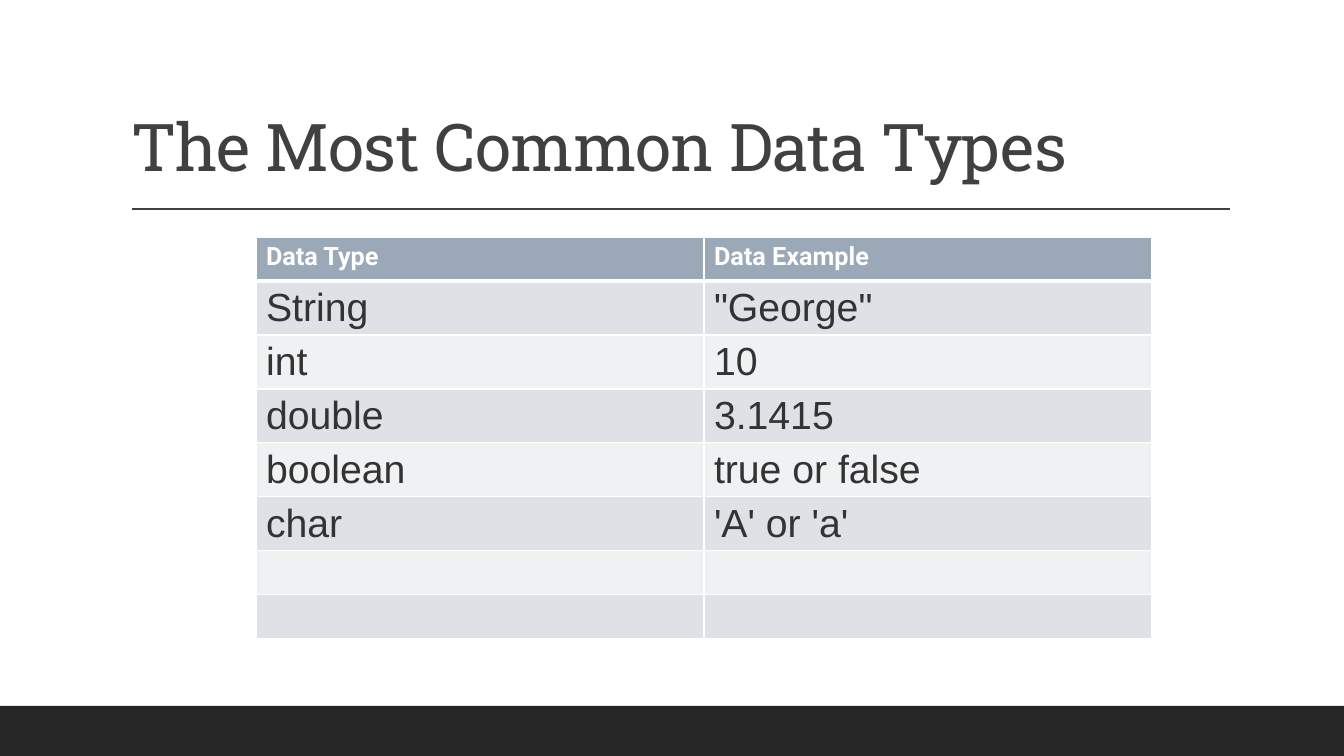
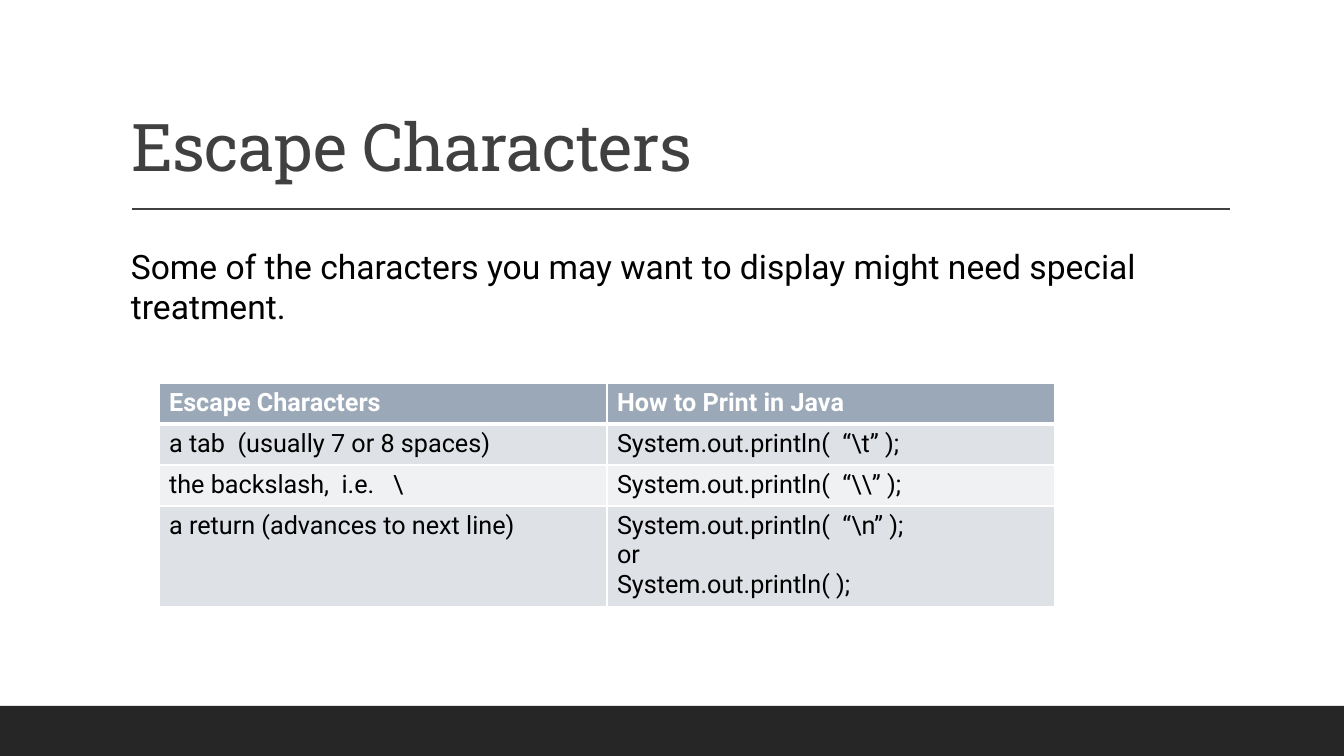
from lxml import etree
from pptx import Presentation, util as u
from pptx.dml.color import RGBColor
from pptx.enum import shapes, text as t
from pptx.oxml import ns

WIDTH, HEIGHT = 1344, 756
EMU_PER_PX = u.Inches(7.5) / HEIGHT

WHITE = RGBColor(0xFF, 0xFF, 0xFF)
BLACK = RGBColor(0x00, 0x00, 0x00)
BAND = RGBColor(0x26, 0x26, 0x26)
TITLE = RGBColor(0x40, 0x40, 0x40)
BODY = RGBColor(0x33, 0x33, 0x33)
HEADER = RGBColor(0x9B, 0xA8, 0xB7)
STRIPES = RGBColor(0xDE, 0xE1, 0xE6), RGBColor(0xEF, 0xF1, 0xF3)

DATA_TYPES = [
    ("Data Type", "Data Example"),
    ("String", '"George"'),
    ("int", "10"),
    ("double", "3.1415"),
    ("boolean", "true or false"),
    ("char", "'A' or 'a'"),
    ("", ""),
    ("", ""),
]
ESCAPES = [
    ("Escape Characters", "How to Print in Java"),
    ("a tab  (usually 7 or 8 spaces)", r"System.out.println(  “\t” );"),
    ("the backslash,  i.e.   \\", r"System.out.println(  “\\” );"),
    ("a return (advances to next line)",
     r"System.out.println(  “\n” );" + "\nor\nSystem.out.println( );"),
]


def px(*lengths):
    return [u.Emu(round(length * EMU_PER_PX)) for length in lengths]


def write(frame, text, *, size=18, font="Roboto", color=BLACK, bold=False,
          line_spacing=1.0, tracking=None):
    """Fill a text frame, one paragraph per line; tracking is in 1/100 pt."""
    for index, line in enumerate(text.split("\n")):
        paragraph = frame.add_paragraph() if index else frame.paragraphs[0]
        paragraph.alignment = t.PP_ALIGN.LEFT
        paragraph.line_spacing = line_spacing
        if not line:
            continue
        run = paragraph.add_run()
        run.text = line
        run.font.size = u.Pt(size)
        run.font.name = font
        run.font.bold = bold
        run.font.color.rgb = color
        if tracking is not None:
            run.font._element.set("spc", str(tracking))


def set_borders(cell, **widths):
    """Draw white borders; must run before the cell gets its fill."""
    properties = cell._tc.get_or_add_tcPr()
    for side in "LRTB":
        width = u.Pt(widths.get(side, 1))
        line = etree.SubElement(properties, ns.qn(f"a:ln{side}"), w=str(width))
        fill = etree.SubElement(line, ns.qn("a:solidFill"))
        etree.SubElement(fill, ns.qn("a:srgbClr"), val=str(WHITE))


class Deck:
    """Holds the shared style and the slide being built."""

    def __init__(self):
        self.presentation = Presentation()
        (self.presentation.slide_width,
         self.presentation.slide_height) = px(WIDTH, HEIGHT)
        self.slide = None

    def add_slide(self, title):
        layout = self.presentation.slide_layouts.get_by_name("Title Only")
        self.slide = self.presentation.slides.add_slide(layout)
        self.add_band()
        self.add_rule()
        self.add_title(title)

    def add_band(self):
        band = self.slide.shapes.add_shape(
            shapes.MSO_SHAPE.RECTANGLE, *px(0, 706, WIDTH, HEIGHT - 706))
        band.shadow.inherit = False
        band.fill.solid()
        band.fill.fore_color.rgb = BAND
        band.line.fill.background()

    def add_rule(self):
        rule = self.slide.shapes.add_connector(
            shapes.MSO_CONNECTOR.STRAIGHT, *px(132, 209, 1230, 209))
        rule.line.color.rgb = TITLE
        rule.line.width = u.Pt(1)
        etree.SubElement(rule._element.spPr, ns.qn("a:effectLst"))

    def add_title(self, title):
        shape = self.slide.shapes.title
        shape.left, shape.top, shape.width, shape.height = px(121, 31, 1109, 160)
        frame = shape.text_frame
        frame.word_wrap = True
        frame.auto_size = t.MSO_AUTO_SIZE.NONE
        frame.vertical_anchor = t.MSO_ANCHOR.BOTTOM
        write(frame, title, size=47, font="Roboto Slab", color=TITLE,
              line_spacing=0.9, tracking=-50)

    def add_text(self, text, left, top, width, height, **style):
        frame = self.slide.shapes.add_textbox(
            *px(left, top, width, height)).text_frame
        frame.word_wrap = False
        frame.auto_size = t.MSO_AUTO_SIZE.SHAPE_TO_FIT_TEXT
        write(frame, text, **style)

    def add_table(self, rows, left, top, heights, column_width=448, **style):
        columns = len(rows[0])
        table = self.slide.shapes.add_table(
            len(rows), columns,
            *px(left, top, columns * column_width, sum(heights))).table
        table.first_row = table.horz_banding = False
        for row, height in zip(table.rows, px(*heights)):
            row.height = height
        for row_index, row in enumerate(rows):
            for column_index, text in enumerate(row):
                cell = table.cell(row_index, column_index)
                set_borders(cell, B=3 if row_index == 0 else 1,
                            T=3 if row_index == 1 else 1)
                cell.fill.solid()
                if row_index == 0:
                    cell.fill.fore_color.rgb = HEADER
                    write(cell.text_frame, text, color=WHITE, bold=True)
                else:
                    cell.fill.fore_color.rgb = STRIPES[(row_index - 1) % 2]
                    write(cell.text_frame, text, **style)


def main():
    deck = Deck()

    deck.add_slide("The Most Common Data Types")
    deck.add_table(DATA_TYPES, 256, 237, [44] + [54] * 5 + [44] * 2,
                   size=28, font="Arial", color=BODY)

    deck.add_slide("Escape Characters")
    deck.add_text("Some of the characters you may want to display "
                  "might need special treatment.", 121, 241, 1188, 50, size=24)
    deck.add_table(ESCAPES, 159, 383, [41] * 3 + [100])

    deck.presentation.save("out.pptx")


if __name__ == "__main__":
    main()
